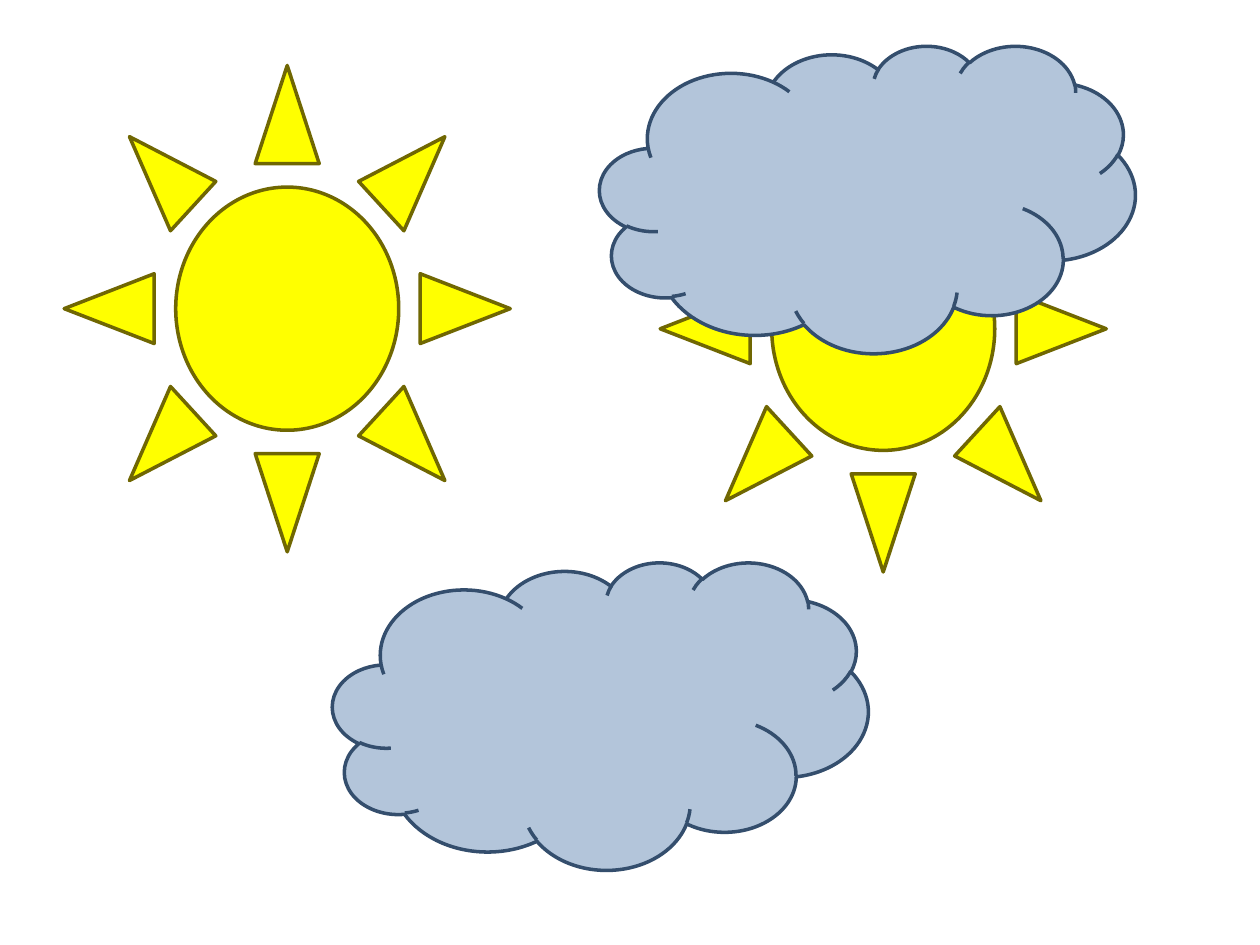
from pptx import Presentation
from pptx.dml.color import RGBColor
from pptx.enum.shapes import MSO_SHAPE
from pptx.util import Inches, Pt

SUN, CLOUD = MSO_SHAPE.SUN, MSO_SHAPE.CLOUD
YELLOW = RGBColor(0xFF, 0xFF, 0x00)
OLIVE = RGBColor(0x70, 0x67, 0x02)
PALE_BLUE = RGBColor(0xB3, 0xC5, 0xDA)
NAVY = RGBColor(0x34, 0x4E, 0x6D)

prs = Presentation()
prs.slide_width, prs.slide_height = Inches(10), Inches(7.5)
s = prs.slides.add_slide(prs.slide_layouts[6])

sun_style = (SUN, 3.54, 3.86, YELLOW, OLIVE)
cloud_style = (CLOUD, 4.25, 2.44, PALE_BLUE, NAVY)
weather = [
    (0.51, 0.52, sun_style),
    (5.24, 0.68, sun_style),
    (4.76, 0.36, cloud_style),
    (2.64, 4.46, cloud_style),
]

for left, top, (kind, width, height, fill, line) in weather:
    sp = s.shapes.add_shape(kind, Inches(left), Inches(top), Inches(width), Inches(height))
    sp.shadow.inherit = False
    sp.fill.solid()
    sp.fill.fore_color.rgb = fill
    sp.line.color.rgb = line
    sp.line.width = Pt(2)

prs.save("out.pptx")
